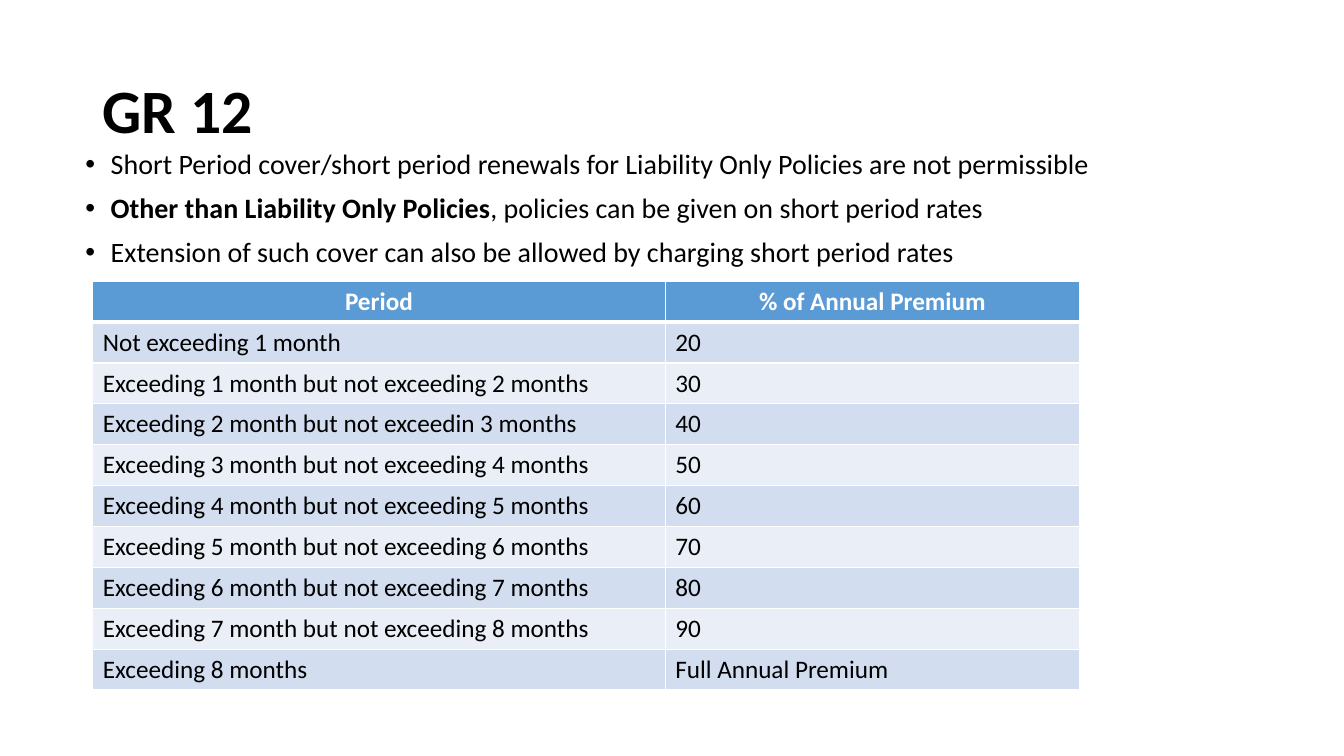
import pptx
import pptx.util
import pptx.dml.color
import pptx.enum.text
import pptx.oxml
import pptx.oxml.ns

Pt = pptx.util.Pt
ANCHOR = pptx.enum.text.MSO_ANCHOR
ALIGN = pptx.enum.text.PP_ALIGN
FONT = "Calibri"
COLORS = {"text": "000000", "white": "FFFFFF", "header": "5B9BD5",
          "band_dark": "D2DEEF", "band_light": "EAEFF7"}

BULLETS = [
    [("Short Period cover/short period renewals for Liability Only Policies are not permissible", False)],
    [("Other than Liability Only Policies", True),
     (", policies can be given on short period rates", False)],
    [("Extension of such cover can also be allowed by charging short period rates", False)],
]
RATES = [
    ("Period", "% of Annual Premium"),
    ("Not exceeding 1 month", "20"),
    ("Exceeding 1 month but not exceeding 2 months", "30"),
    ("Exceeding 2 month but not exceedin 3 months", "40"),
    ("Exceeding 3 month but not exceeding 4 months", "50"),
    ("Exceeding 4 month but not exceeding 5 months", "60"),
    ("Exceeding 5 month but not exceeding 6 months", "70"),
    ("Exceeding 6 month but not exceeding 7 months", "80"),
    ("Exceeding 7 month but not exceeding 8 months", "90"),
    ("Exceeding 8 months", "Full Annual Premium"),
]


def rgb(name):
    return pptx.dml.color.RGBColor.from_string(COLORS[name])


def add_run(p, text, size, color="text", bold=False):
    r = p.add_run()
    r.text = text
    r.font.name = FONT
    r.font.size = Pt(size)
    r.font.bold = bold
    r.font.color.rgb = rgb(color)


def add_text_frame(s, box, anchor):
    tf = s.shapes.add_textbox(*map(Pt, box)).text_frame
    tf.word_wrap = True
    tf.vertical_anchor = anchor
    return tf


def add_title(s, box, text):
    p = add_text_frame(s, box, ANCHOR.MIDDLE).paragraphs[0]
    p.line_spacing = 0.9
    add_run(p, text, 44, bold=True)


def add_bullets(s, box, items):
    tf = add_text_frame(s, box, ANCHOR.TOP)
    for i, item in enumerate(items):
        p = tf.add_paragraph() if i else tf.paragraphs[0]
        p.line_spacing = 0.9
        p.space_before = Pt(10)
        pPr = p._p.get_or_add_pPr()
        pPr.set("marL", str(Pt(18)))
        pPr.set("indent", str(-Pt(18)))
        for tag, attrs in (("buFont", 'typeface="Arial"'), ("buChar", 'char="•"')):
            pPr.append(pptx.oxml.parse_xml(
                f'<a:{tag} {pptx.oxml.ns.nsdecls("a")} {attrs}/>'))
        for text, bold in item:
            add_run(p, text, 20, bold=bold)


def set_borders(cell, top, bottom):
    tcPr = cell._tc.get_or_add_tcPr()
    widths = {"lnL": 1, "lnR": 1, "lnT": top, "lnB": bottom}
    for i, (tag, width) in enumerate(widths.items()):
        tcPr.insert(i, pptx.oxml.parse_xml(
            f'<a:{tag} {pptx.oxml.ns.nsdecls("a")} w="{Pt(width)}"><a:solidFill>'
            f'<a:srgbClr val="{COLORS["white"]}"/></a:solidFill></a:{tag}>'))


def add_rate_table(s, box, rows, first_share):
    left, top, width, height = box
    table = s.shapes.add_table(len(rows), 2, *map(Pt, box)).table
    table.columns[0].width = Pt(width * first_share)
    table.columns[1].width = Pt(width * (1 - first_share))
    for i, row in enumerate(rows):
        table.rows[i].height = Pt(height / len(rows))
        header = i == 0
        fill = "header" if header else "band_dark" if i % 2 else "band_light"
        for j, text in enumerate(row):
            cell = table.cell(i, j)
            cell.fill.solid()
            cell.fill.fore_color.rgb = rgb(fill)
            set_borders(cell, 3 if i == 1 else 1, 3 if header else 1)
            p = cell.text_frame.paragraphs[0]
            p.alignment = ALIGN.CENTER if header else ALIGN.LEFT
            add_run(p, text, 18, "white" if header else "text", header)


def main():
    prs = pptx.Presentation()
    prs.slide_width, prs.slide_height = Pt(960), Pt(540)
    s = prs.slides.add_slide(prs.slide_layouts[6])
    # Heading
    add_title(s, (66, 28.75, 828, 104.4), "GR 12")
    # Rules
    add_bullets(s, (54, 103.7, 828, 342.6), BULLETS)
    # Short period rates
    add_rate_table(s, (66.25, 200.9, 705, 292), RATES, 0.58)
    prs.save("out.pptx")


if __name__ == "__main__":
    main()
